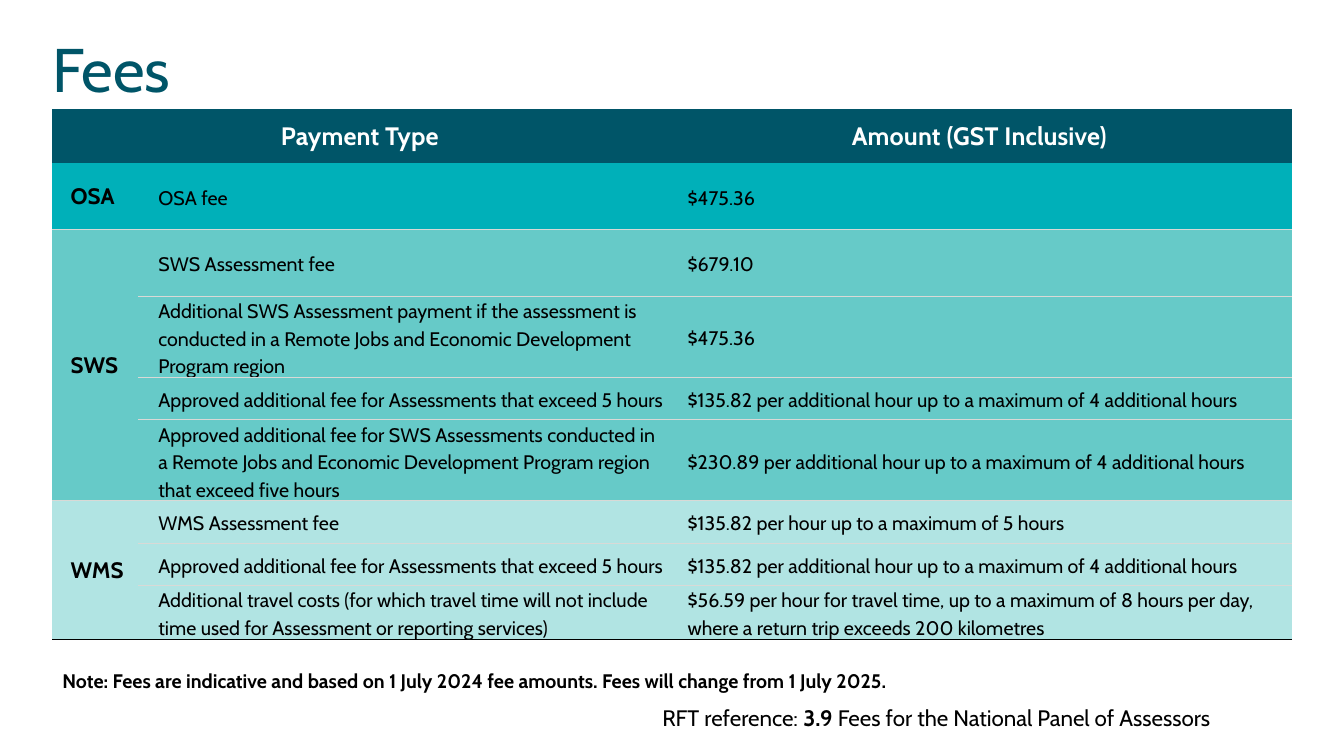
import pptx
import pptx.dml.color
import pptx.enum.text
import pptx.oxml.ns
import pptx.util
from lxml import etree

ANCHOR = pptx.enum.text.MSO_ANCHOR
ALIGN = pptx.enum.text.PP_ALIGN
NAVY, WHITE, BLACK, GREY = "005568", "FFFFFF", "000000", "D9D9D6"

HEADINGS = ["Payment Type", "Amount (GST Inclusive)"]
EXTRA_FEE = "Approved additional fee for Assessments that exceed 5 hours"
EXTRA_AMOUNT = "$135.82 per additional hour up to a maximum of 4 additional hours"
# Name, fill, and the fee rows of each group
GROUPS = [
    ("OSA", "00B0B9", [("OSA fee", "$475.36")]),
    ("SWS", "66CAC8", [
        ("SWS Assessment fee", "$679.10"),
        ("Additional SWS Assessment payment if the assessment is conducted in a "
         "Remote Jobs and Economic Development Program region", "$475.36"),
        (EXTRA_FEE, EXTRA_AMOUNT),
        ("Approved additional fee for SWS Assessments conducted in a Remote Jobs and "
         "Economic Development Program region that exceed five hours",
         "$230.89 per additional hour up to a maximum of 4 additional hours"),
    ]),
    ("WMS", "B1E4E3", [
        ("WMS Assessment fee", "$135.82 per hour up to a maximum of 5 hours"),
        (EXTRA_FEE, EXTRA_AMOUNT),
        ("Additional travel costs (for which travel time will not include time used "
         "for Assessment or reporting services)",
         "$56.59 per hour for travel time, up to a maximum of 8 hours per day, "
         "where a return trip exceeds 200 kilometres"),
    ]),
]
# Percentages of the slide's width and height
COLUMNS = [6.38, 39.38, 46.44]
ROWS = [7.2, 8.8, 8.8] + [5.6] * 6


def colour(value):
    return pptx.dml.color.RGBColor.from_string(value)


class FeesPage:
    font = "Cabin"

    def __init__(self, deck):
        self.deck = deck
        self.page = deck.slides.add_slide(deck.slide_layouts[6])

    def across(self, percent):
        return round(self.deck.slide_width * percent / 100)

    def down(self, percent):
        return round(self.deck.slide_height * percent / 100)

    def frame(self, left, top, width, height):
        return self.across(left), self.down(top), self.across(width), self.down(height)

    def style(self, span, size, ink, bold=False, spacing=0):
        span.font.name = self.font
        span.font.size = pptx.util.Pt(size)
        span.font.bold = bold
        span.font.color.rgb = colour(ink)
        if spacing:
            span.font._element.set("spc", str(spacing))

    def text(self, place, spans, size, ink=BLACK, inset=None, anchor=ANCHOR.TOP):
        """Adds a text box from (wording, bold) pairs."""
        box = self.page.shapes.add_textbox(*self.frame(*place))
        body = box.text_frame
        body.word_wrap = True
        body.auto_size = pptx.enum.text.MSO_AUTO_SIZE.SHAPE_TO_FIT_TEXT
        body.vertical_anchor = anchor
        if inset is not None:
            body.margin_left = body.margin_right = inset
            body.margin_top = body.margin_bottom = inset
        para = body.paragraphs[0]
        for wording, bold in spans:
            span = para.add_run()
            span.text = wording
            self.style(span, size, ink, bold)

    def table(self, place, columns, rows):
        holder = self.page.shapes.add_table(len(rows), len(columns), *self.frame(*place))
        table = holder.table
        table.first_row = table.horz_banding = False
        for column, width in zip(table.columns, columns):
            column.width = self.across(width)
        for row, height in zip(table.rows, rows):
            row.height = self.down(height)
        holder.height = self.down(place[3])
        return table

    def cell(self, cell, fill, top=None, bottom=None):
        """Sets the fill and the four borders of a cell."""
        cell.fill.solid()
        cell.fill.fore_color.rgb = colour(fill)
        properties = cell._tc.get_or_add_tcPr()
        edges = [("L", None), ("R", None), ("T", top), ("B", bottom)]
        for index, (side, ink) in enumerate(edges):
            line = etree.Element(pptx.oxml.ns.qn(f"a:ln{side}"), w="12700")
            if ink:
                solid = etree.SubElement(line, pptx.oxml.ns.qn("a:solidFill"))
                etree.SubElement(solid, pptx.oxml.ns.qn("a:srgbClr"), val=ink)
            else:
                etree.SubElement(line, pptx.oxml.ns.qn("a:noFill"))
            properties.insert(index, line)

    def cell_text(self, cell, wording, size, ink=BLACK, bold=False, insets=(0.06,) * 4):
        """Writes a cell; insets are left, top, right and bottom in inches."""
        cell.text_frame.text = wording
        cell.vertical_anchor = ANCHOR.MIDDLE
        (cell.margin_left, cell.margin_top,
         cell.margin_right, cell.margin_bottom) = map(pptx.util.Inches, insets)
        para = cell.text_frame.paragraphs[0]
        self.style(para.runs[0], size, ink, bold, spacing=10 if bold else 0)
        return para

    def heading(self, cell, wording):
        self.cell_text(cell, wording, 18, WHITE, True).alignment = ALIGN.CENTER

    def group_name(self, cell, wording):
        para = self.cell_text(cell, wording, 16, bold=True)
        properties = para._p.get_or_add_pPr()
        properties.set("marL", str(pptx.util.Inches(0.12)))
        properties.set("indent", "0")

    def fee(self, cell, wording, insets):
        para = self.cell_text(cell, wording, 14, insets=insets)
        para.line_spacing = 1.15
        para.space_after = pptx.util.Pt(10)


def main():
    deck = pptx.Presentation()
    deck.slide_width = pptx.util.Inches(13.33)
    deck.slide_height = pptx.util.Inches(7.5)
    page = FeesPage(deck)

    # Title
    page.text((3.9, 4, 85.15, 9.87), [("Fees", False)], 44, NAVY, 0, ANCHOR.BOTTOM)

    # Table heading
    table = page.table((3.9, 14.4, 92.2, 71.73), COLUMNS, ROWS)
    for column in range(3):
        page.cell(table.cell(0, column), NAVY)
    table.cell(0, 0).merge(table.cell(0, 1))
    for column, wording in zip((0, 2), HEADINGS):
        page.heading(table.cell(0, column), wording)

    # Fee groups
    row = 1
    for name, fill, fees in GROUPS:
        first, last = row, row + len(fees) - 1
        group_top = None if first == 1 else GREY
        group_bottom = BLACK if last == len(ROWS) - 1 else GREY
        for what, amount in fees:
            bottom = group_bottom if row == last else GREY
            page.cell(table.cell(row, 0), fill, group_top if row == first else None,
                      group_bottom if row in (first, last) else None)
            for column, wording in ((1, what), (2, amount)):
                page.cell(table.cell(row, column), fill, group_top, bottom)
                page.fee(table.cell(row, column), wording,
                         (0.2, 0, 0.06 if column == 2 else 0, 0))
            row += 1
        if last > first:
            table.cell(first, 0).merge(table.cell(last, 0))
        page.group_name(table.cell(first, 0), name)

    # Note and reference
    page.text((3.9, 87.87, 87.32, 4.53),
              [("Note: Fees are indicative and based on 1 July 2024 fee amounts. "
                "Fees will change from 1 July 2025.", True)], 14)
    page.text((48.54, 92.53, 45.76, 4.93),
              [("RFT reference: ", False), ("3.9 ", True),
               ("Fees for the National Panel of Assessors", False)], 16)

    deck.save("out.pptx")


if __name__ == "__main__":
    main()
